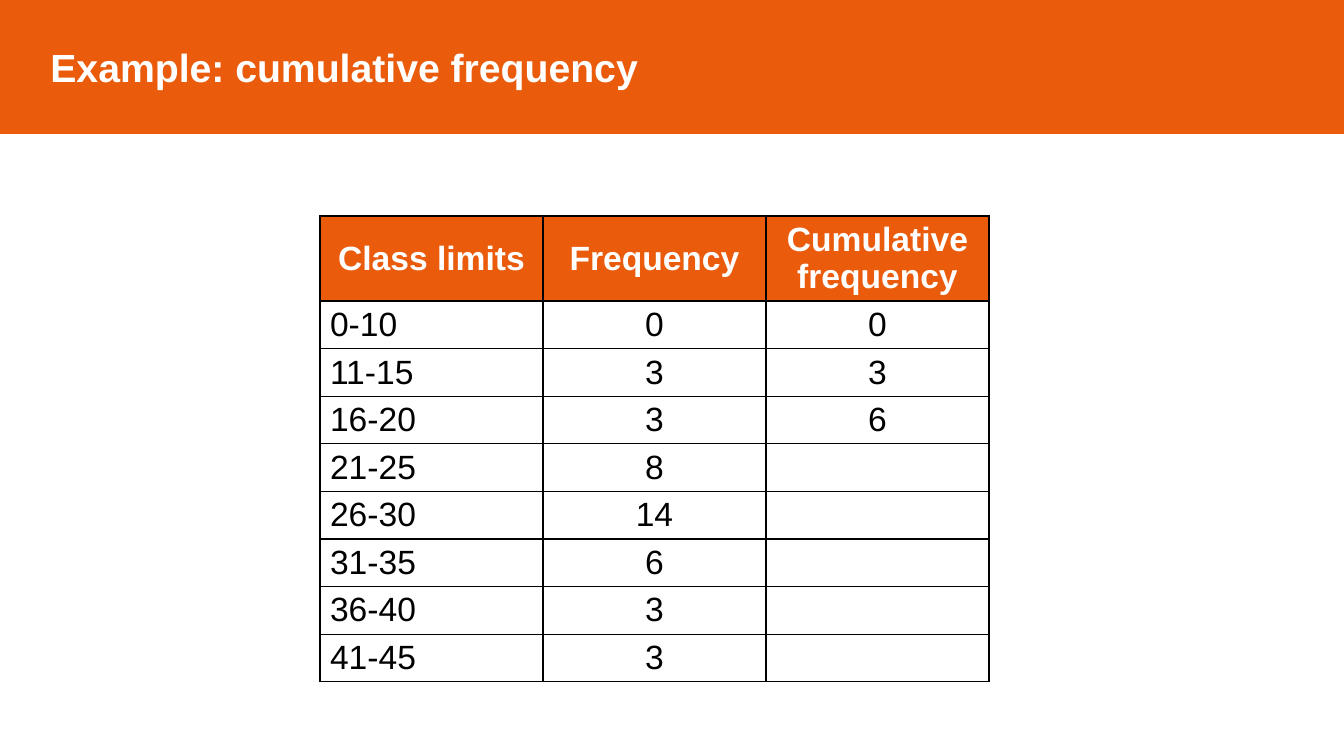
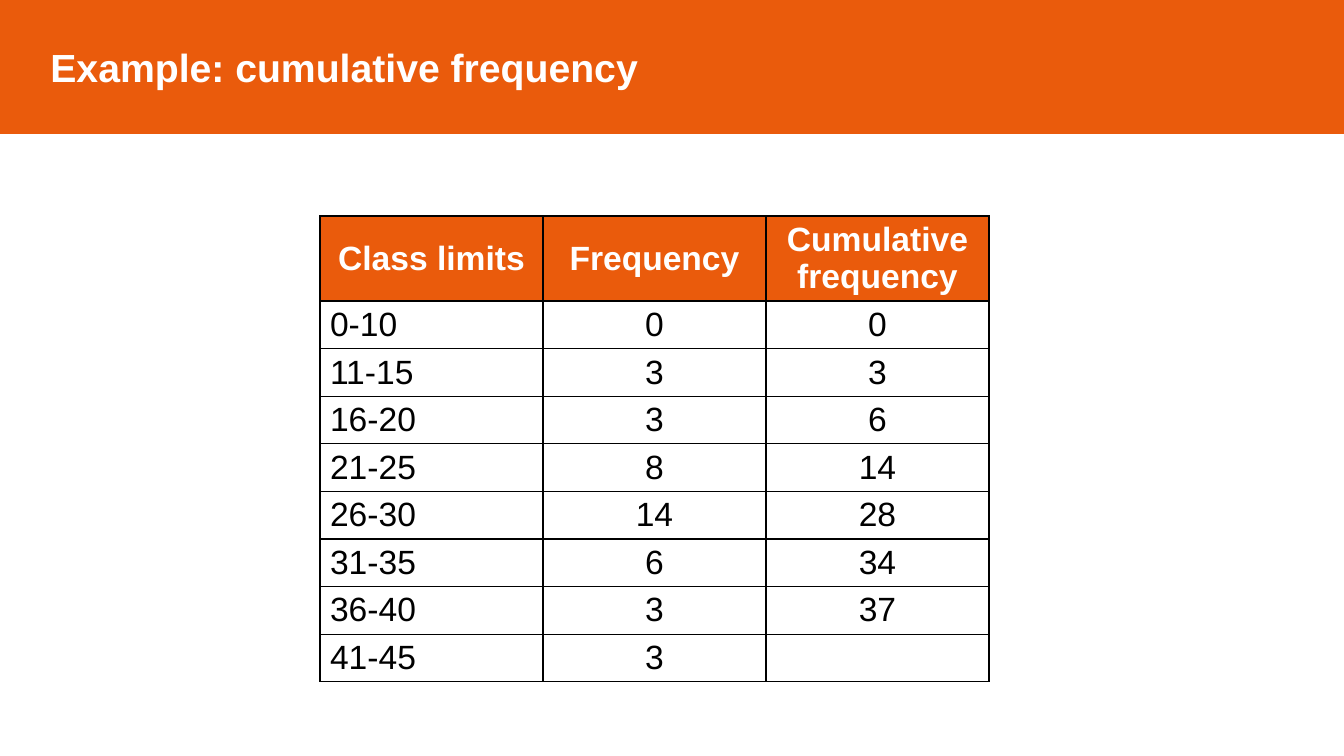
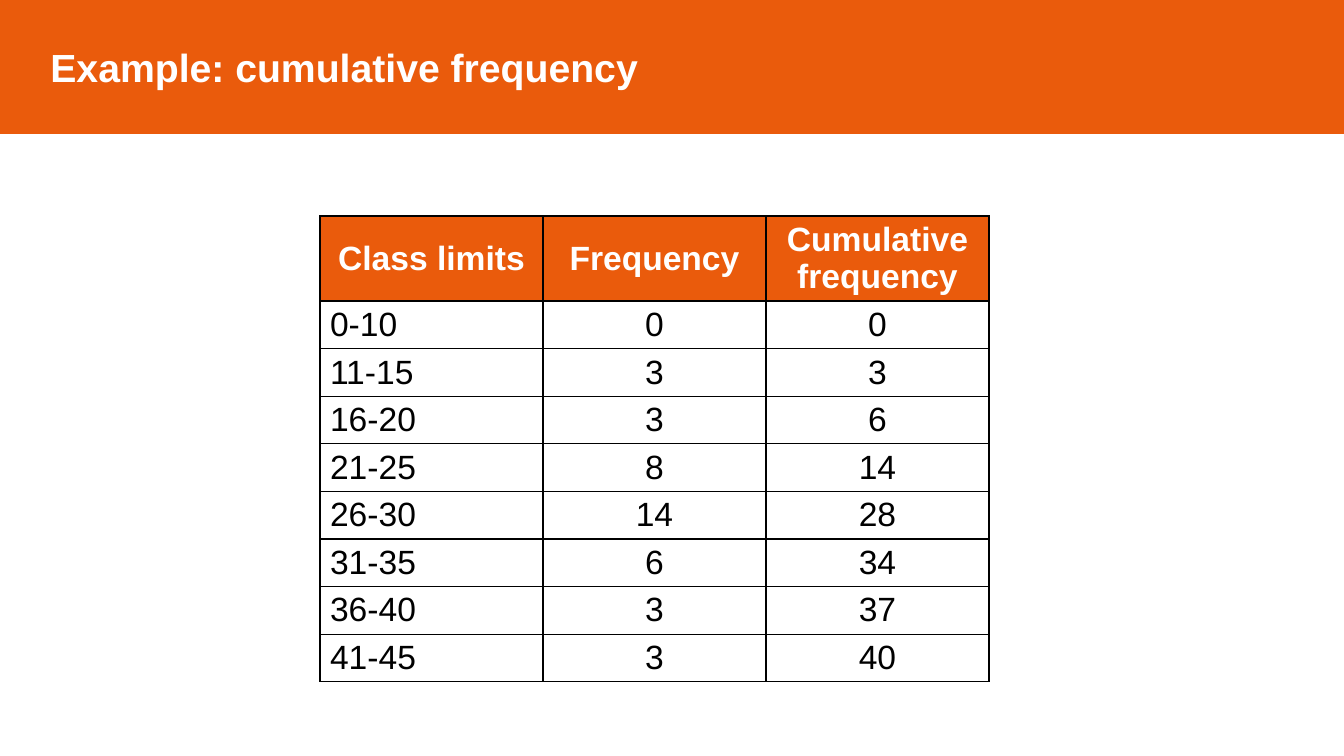
from dataclasses import dataclass
from itertools import accumulate

from lxml import etree
from pptx import Presentation
from pptx import util as u
from pptx.dml import color
from pptx.enum import text
from pptx.oxml import ns

PX = 914400 / 100.8


@dataclass(frozen=True)
class Theme:
    font: str = "Arial"
    main: str = "EA5B0C"
    light: str = "FFFFFF"
    dark: str = "000000"
    title: int = 28
    body: int = 24
    rule: int = 1


@dataclass(frozen=True)
class Box:
    x: int
    y: int
    w: int
    h: int


@dataclass(frozen=True)
class Group:
    limits: str
    count: int


THEME = Theme()
PAGE = Box(0, 0, 1344, 756)
BAND = Box(0, 0, PAGE.w, 133)
TITLE = "Example: cumulative frequency"
HEADS = ("Class limits", "Frequency", "Cumulative frequency")
GROUPS = (
    Group("0-10", 0),
    Group("11-15", 3),
    Group("16-20", 3),
    Group("21-25", 8),
    Group("26-30", 14),
    Group("31-35", 6),
    Group("36-40", 3),
    Group("41-45", 3),
)
SHOWN = (3, 7, 8)
HEAD_H = 85
ROW_H = 47
COL_W = 223
GRID = Box(320, 216, COL_W * len(HEADS), HEAD_H + ROW_H * len(GROUPS))


def px(size: int) -> int:
    return round(size * PX)


def rgb(code: str) -> color.RGBColor:
    return color.RGBColor.from_string(code)


def style(para, size: int, code: str, bold: bool, align) -> None:
    para.alignment = align
    for run in para.runs:
        run.font.name = THEME.font
        run.font.size = u.Pt(size)
        run.font.bold = bold
        run.font.color.rgb = rgb(code)


def fill(item, code: str) -> None:
    item.fill.solid()
    item.fill.fore_color.rgb = rgb(code)


def border(cell) -> None:
    props = cell._tc.get_or_add_tcPr()
    for spot, side in enumerate(("lnL", "lnR", "lnT", "lnB")):
        line = etree.Element(ns.qn(f"a:{side}"), w=str(u.Pt(THEME.rule)))
        solid = etree.SubElement(line, ns.qn("a:solidFill"))
        etree.SubElement(solid, ns.qn("a:srgbClr"), val=THEME.dark)
        props.insert(spot, line)


def draw_band(slide) -> None:
    band = slide.shapes.title
    band.left, band.top = px(BAND.x), px(BAND.y)
    band.width, band.height = px(BAND.w), px(BAND.h)
    fill(band, THEME.main)
    band.line.color.rgb = rgb(THEME.main)
    band.line.width = u.Pt(THEME.rule)
    frame = band.text_frame
    frame.text = TITLE
    frame.word_wrap = True
    frame.auto_size = text.MSO_AUTO_SIZE.NONE
    frame.vertical_anchor = text.MSO_ANCHOR.MIDDLE
    frame.margin_left = u.Inches(0.5)
    style(frame.paragraphs[0], THEME.title, THEME.light, True, text.PP_ALIGN.LEFT)


def draw_cell(cell, label: str, head: bool, first: bool) -> None:
    cell.text = label
    fill(cell, THEME.main if head else THEME.light)
    border(cell)
    cell.vertical_anchor = text.MSO_ANCHOR.MIDDLE if head else text.MSO_ANCHOR.TOP
    align = text.PP_ALIGN.LEFT if first and not head else text.PP_ALIGN.CENTER
    style(
        cell.text_frame.paragraphs[0],
        THEME.body,
        THEME.light if head else THEME.dark,
        head,
        align,
    )


def draw_table(slide, shown: int) -> None:
    sums = accumulate(group.count for group in GROUPS)
    rows = [HEADS] + [
        (group.limits, str(group.count), str(total) if n < shown else "")
        for n, (group, total) in enumerate(zip(GROUPS, sums))
    ]
    table = slide.shapes.add_table(
        len(rows), len(HEADS), px(GRID.x), px(GRID.y), px(GRID.w), px(GRID.h)
    ).table
    table.first_row = table.horz_banding = False
    for col in table.columns:
        col.width = px(COL_W)
    for r, labels in enumerate(rows):
        table.rows[r].height = px(ROW_H if r else HEAD_H)
        for c, label in enumerate(labels):
            draw_cell(table.cell(r, c), label, r == 0, c == 0)


def main() -> None:
    deck = Presentation()
    deck.slide_width, deck.slide_height = px(PAGE.w), px(PAGE.h)
    for shown in SHOWN:
        slide = deck.slides.add_slide(deck.slide_layouts[5])
        draw_band(slide)
        draw_table(slide, shown)
    deck.save("out.pptx")


if __name__ == "__main__":
    main()
